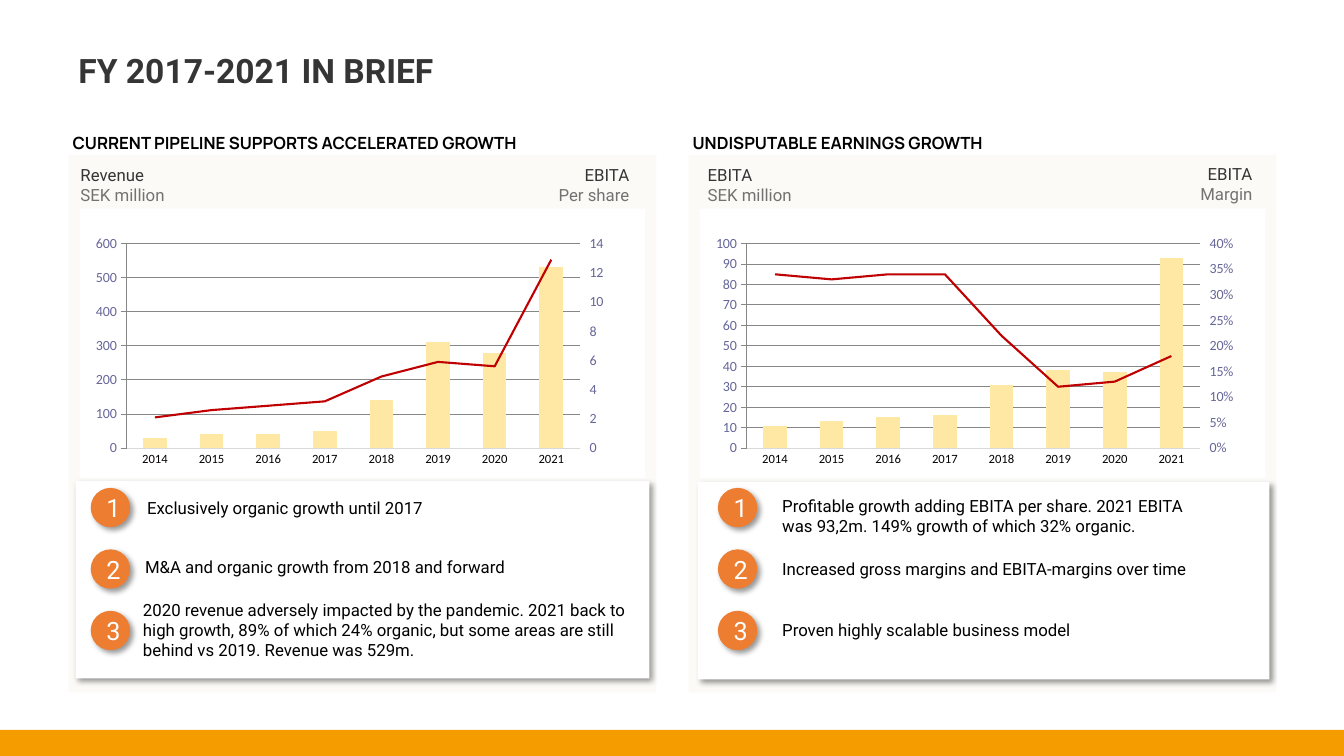
from lxml import etree
from pptx import Presentation
from pptx.chart.axis import ValueAxis
from pptx.chart.data import CategoryChartData
from pptx.dml.color import RGBColor
from pptx.enum.chart import XL_CHART_TYPE, XL_MARKER_STYLE, XL_TICK_MARK
from pptx.enum.shapes import MSO_SHAPE
from pptx.enum.text import MSO_ANCHOR, PP_ALIGN
from pptx.oxml import parse_xml
from pptx.oxml.ns import nsdecls, qn
from pptx.util import Inches, Pt

RECT, OVAL = MSO_SHAPE.RECTANGLE, MSO_SHAPE.OVAL
TOP, MID, LOW = MSO_ANCHOR.TOP, MSO_ANCHOR.MIDDLE, MSO_ANCHOR.BOTTOM
LEFT, MIDDLE, RIGHT = PP_ALIGN.LEFT, PP_ALIGN.CENTER, PP_ALIGN.RIGHT
COLUMN, BARE = XL_CHART_TYPE.COLUMN_CLUSTERED, XL_MARKER_STYLE.NONE
OFF, OUT = XL_TICK_MARK.NONE, XL_TICK_MARK.OUTSIDE

TITLE = "FY 2017-2021 IN BRIEF"
YEARS = [str(year) for year in range(2014, 2022)]
PANELS = [
    {
        "head": "CURRENT PIPELINE SUPPORTS ACCELERATED GROWTH",
        "left": (0.7, 1.6, 4.1, ("Revenue", "SEK million")),
        "right": (2.72, 1.6, 3.62, ("EBITA", "Per share")),
        "chart": 0.79,
        "bars": ([30, 40, 40, 50, 140, 310, 280, 530], 600, 100, "#,##0"),
        "line": ([2.1, 2.6, 2.9, 3.2, 4.9, 5.9, 5.6, 12.9], 14, 2, "0"),
        "card": (0.75, 4.77, 5.69, 1.96),
        "badge": 0.9,
        "points": [
            (1.36, 4.89, 3.58, 0.3, "Exclusively organic growth until 2017"),
            (1.34, 5.47, 4.53, 0.3, "M&A and organic growth from 2018 and forward"),
            (1.32, 5.9, 5.1, 0.71, "2020 revenue adversely impacted by the pandemic. 2021 back to "
             "high growth, 89% of which 24% organic, but some areas are still behind vs 2019. "
             "Revenue was 529m."),
        ],
    },
    {
        "head": "UNDISPUTABLE EARNINGS GROWTH",
        "left": (6.92, 1.6, 4.1, ("EBITA", "SEK million")),
        "right": (8.42, 1.59, 4.1, ("EBITA", "Margin")),
        "chart": 6.94,
        "bars": ([11, 13, 15, 16, 31, 38, 37, 93], 100, 10, "0"),
        "line": ([0.34, 0.33, 0.34, 0.34, 0.22, 0.12, 0.13, 0.18], 0.4, 0.05, "0%"),
        "card": (6.92, 4.78, 5.67, 1.96),
        "badge": 7.12,
        "points": [
            (7.66, 4.87, 4.31, 0.5, "Profitable growth adding EBITA per share. 2021 EBITA "
             "was 93,2m. 149% growth of which 32% organic."),
            (7.66, 5.49, 4.53, 0.3, "Increased gross margins and EBITA-margins over time"),
            (7.66, 6.1, 4.53, 0.3, "Proven highly scalable business model"),
        ],
    },
]
THEME = {
    "white": "FFFFFF", "black": "000000", "ink": "353535", "muted": "767171",
    "panel": "FBFAF7", "footer": "F59C00", "badge": "ED7D31", "bar": "FFE8A3",
    "curve": "C00000", "tick": "040000", "second": "666699", "grid": "D9D9D9", "rule": "8C8C8C",
    "text": "Roboto", "bold": "Manrope", "axis": "Calibri", "scale": "Lato",
    "title_pt": 24, "badge_pt": 18, "body_pt": 12, "second_pt": 10, "tick_pt": 9,
}
SHADOW = (
    f'<a:effectLst {nsdecls("a")}><a:outerShdw blurRad="50800" dist="38100" dir="2700000" '
    'algn="tl" rotWithShape="0"><a:srgbClr val="000000"><a:alpha val="40000"/></a:srgbClr>'
    '</a:outerShdw></a:effectLst>')
LAYOUT = (
    f'<c:layout {nsdecls("c")}><c:manualLayout><c:layoutTarget val="inner"/>'
    '<c:xMode val="edge"/><c:yMode val="edge"/><c:x val="0.083"/><c:y val="0.13"/>'
    '<c:w val="0.801"/><c:h val="0.76"/></c:manualLayout></c:layout>')
CURVE = (
    f'<c:lineChart {nsdecls("c")}><c:grouping val="standard"/><c:varyColors val="0"/>'
    '<c:marker val="1"/><c:axId val="501"/><c:axId val="502"/></c:lineChart>')
AXIS = (
    '<c:{kind} {ns}><c:axId val="{own}"/><c:scaling><c:orientation val="minMax"/></c:scaling>'
    '<c:delete val="{gone}"/><c:axPos val="{side}"/><c:tickLblPos val="nextTo"/>'
    '<c:crossAx val="{other}"/><c:crosses val="{cross}"/></c:{kind}>')
FILL = (
    f'<c:spPr {nsdecls("c", "a")}><a:solidFill><a:srgbClr val="{THEME["white"]}"/></a:solidFill>'
    '<a:ln><a:noFill/></a:ln></c:spPr>')


def tint(name):
    return RGBColor.from_string(THEME[name])


def style(font, face, size, color, bold=False):
    font.name, font.size, font.bold = THEME[face], Pt(THEME[size]), bold
    font.color.rgb = tint(color)


def write(shape, lines, face="text", size="body_pt", colors=("black",),
          bold=False, align=LEFT, anchor=TOP):
    frame = shape.text_frame
    frame.word_wrap, frame.vertical_anchor = True, anchor
    for index, (line, color) in enumerate(zip(lines, colors)):
        para = frame.add_paragraph() if index else frame.paragraphs[0]
        para.text, para.alignment = line, align
        style(para.font, face, size, color, bold)
    return frame


def block(kind, box, color=None, raised=False):
    shape = slide.shapes.add_shape(kind, *map(Inches, box))
    shape.shadow.inherit = False
    shape.line.fill.background()
    if color:
        shape.fill.solid()
        shape.fill.fore_color.rgb = tint(color)
    else:
        shape.fill.background()
    if raised:
        props = shape.element.spPr
        props.replace(props.find(qn("a:effectLst")), parse_xml(SHADOW))
    return shape


def label(box, lines, **look):
    return write(slide.shapes.add_textbox(*map(Inches, box)), lines, **look)


def stroke(line, color, width):
    line.color.rgb, line.width = tint(color), Pt(width)


def scale(axis, top, step, code):
    axis.minimum_scale, axis.maximum_scale, axis.major_unit = 0, top, step
    axis.tick_labels.number_format = code
    axis.tick_labels.number_format_is_linked = False
    axis.minor_tick_mark = OFF


def split(chart):
    area = chart.element.find(".//" + qn("c:plotArea"))
    for old in area.findall(qn("c:layout")):
        area.remove(old)
    area.insert(0, parse_xml(LAYOUT))
    bars = area.find(qn("c:barChart"))
    series = bars.findall(qn("c:ser"))[1]
    flip = series.find(qn("c:invertIfNegative"))
    if flip is not None:
        series.remove(flip)
    curve = parse_xml(CURVE)
    curve.insert(2, series)
    bars.addnext(curve)
    extra = [parse_xml(AXIS.format(ns=nsdecls("c"), kind=kind, own=own, other=other,
                                   gone=gone, side=side, cross=cross))
             for kind, own, other, gone, side, cross in (
                 ("valAx", 502, 501, 0, "r", "max"), ("catAx", 501, 502, 1, "b", "autoZero"))]
    last = area.find(qn("c:valAx"))
    for axis in reversed(extra):
        last.addnext(axis)
    return ValueAxis(extra[0])


def plot(left, bars, line):
    data = CategoryChartData()
    data.categories = YEARS
    data.add_series("Series 1", bars[0])
    data.add_series("Series 2", line[0])
    box = map(Inches, (left, 2.07, 5.61, 2.67))
    chart = slide.shapes.add_chart(COLUMN, *box, data).chart
    chart.has_legend = chart.has_title = False
    style(chart.font, "axis", "second_pt", "second")
    chart.element.find(qn("c:chart")).addnext(parse_xml(FILL))
    second = split(chart)
    years, first = chart.category_axis, chart.value_axis
    scale(first, *bars[1:])
    scale(second, *line[1:])
    for axis, face in ((years, "axis"), (first, "scale")):
        axis.major_tick_mark = axis.minor_tick_mark = OFF
        style(axis.tick_labels.font, face, "tick_pt", "tick")
    style(second.tick_labels.font, "axis", "second_pt", "second")
    second.major_tick_mark = OUT
    stroke(years.format.line, "grid", 0.75)
    stroke(first.major_gridlines.format.line, "grid", 0.75)
    stroke(second.format.line, "rule", 0.5)
    first.format.line.fill.background()
    columns, curve = chart.plots
    columns.gap_width, columns.vary_by_categories = 140, False
    fill = columns.series[0].format.fill
    fill.solid()
    fill.fore_color.rgb = tint("bar")
    trend = curve.series[0]
    trend.smooth, trend.marker.style = False, BARE
    stroke(trend.format.line, "curve", 1.5)


deck = Presentation()
deck.slide_width, deck.slide_height = Inches(13.33), Inches(7.5)
slide = deck.slides.add_slide(deck.slide_layouts[6])
block(RECT, (0, 7.24, 13.33, 0.26), "footer")
title = label((0.68, 0.21, 11.7, 1.03), [TITLE], size="title_pt", colors=["ink"],
              bold=True, anchor=MID)
title.paragraphs[0].line_spacing = 0.9

for column, panel in enumerate(PANELS):
    edge = 0.68 + 6.15 * column
    block(RECT, (edge, 1.54, 5.83, 5.33), "panel")
    block(RECT, panel["card"], "white", True)
    head = write(block(RECT, (edge, 1.26, 5.83, 0.28)), [panel["head"]],
                 face="bold", bold=True, anchor=LOW)
    head.margin_left, head.margin_bottom = Inches(0.04), Inches(0.02)
    head.margin_top = head.margin_right = 0
    for side, align in (("left", LEFT), ("right", RIGHT)):
        *place, lines = panel[side]
        label((*place, 0.47), lines, colors=("ink", "muted"), align=align, anchor=MID)
    plot(panel["chart"], panel["bars"], panel["line"])
    for row, (*box, text) in enumerate(panel["points"]):
        badge = block(OVAL, (panel["badge"], 4.84 + 0.61 * row, 0.39, 0.39), "badge", True)
        write(badge, [str(row + 1)], size="badge_pt", colors=["white"], align=MIDDLE, anchor=MID)
        label(box, [text])

deck.save("out.pptx")
